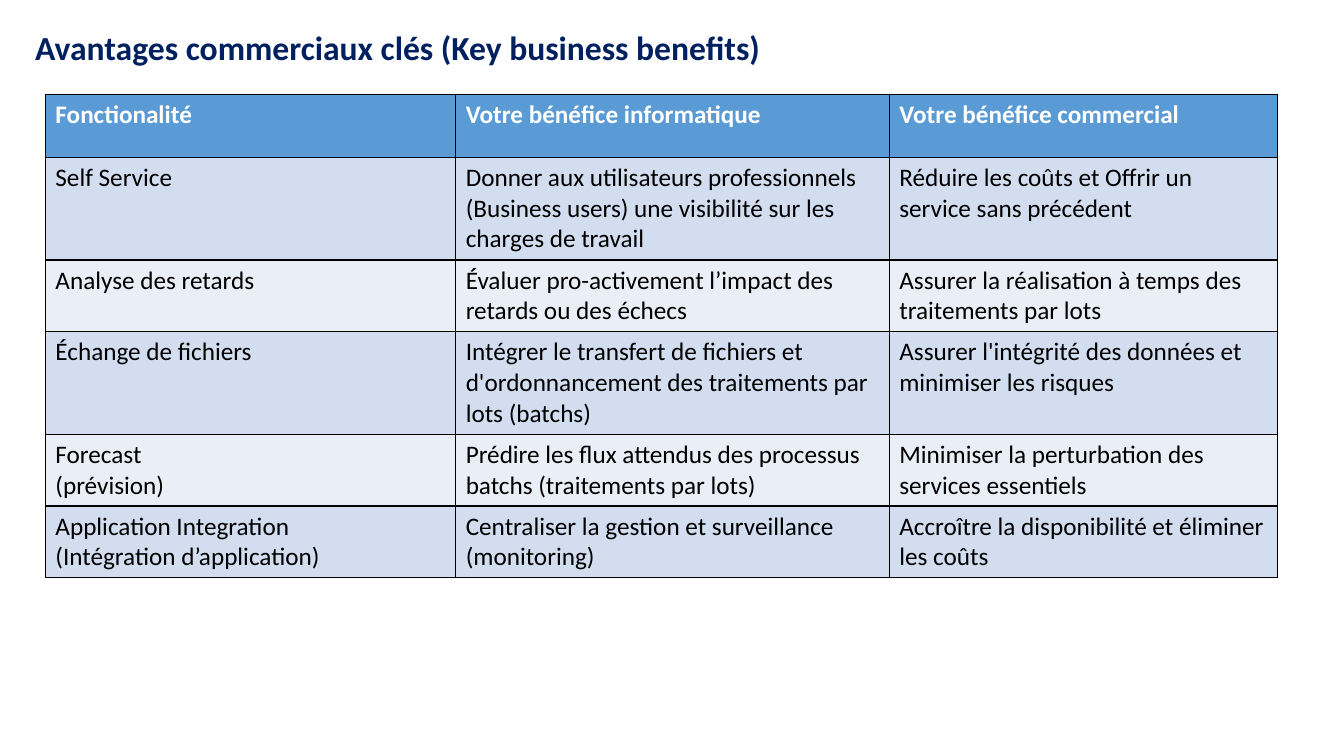
from lxml.etree import SubElement
from pptx import Presentation
from pptx.dml.color import RGBColor
from pptx.oxml.ns import qn
from pptx.util import Inches, Pt

FONT = "Calibri"
COLORS = {
    "title": "002060",
    "header": "5B9BD5",
    "header_text": "FFFFFF",
    "odd_row": "D2DEEF",
    "even_row": "EAEFF7",
    "text": "000000",
    "border": "000000",
}
COLUMN_WIDTHS = [4.07, 4.3, 3.85]
ROW_HEIGHTS = [0.62, 1.02, 0.71, 1.02, 0.71, 0.71]
BENEFITS = [
    ("Fonctionalité", "Votre bénéfice informatique", "Votre bénéfice commercial"),
    ("Self Service",
     "Donner aux utilisateurs professionnels (Business users) une visibilité sur les charges de travail",
     "Réduire les coûts et Offrir un service sans précédent"),
    ("Analyse des retards",
     "Évaluer pro-activement l’impact des retards ou des échecs",
     "Assurer la réalisation à temps des traitements par lots"),
    ("Échange de fichiers",
     "Intégrer le transfert de fichiers et d'ordonnancement des traitements par lots (batchs)",
     "Assurer l'intégrité des données et minimiser les risques"),
    ("Forecast\n(prévision)",
     "Prédire les flux attendus des processus batchs (traitements par lots)",
     "Minimiser la perturbation des services essentiels"),
    ("Application Integration\n(Intégration d’application)",
     "Centraliser la gestion et surveillance (monitoring)",
     "Accroître la disponibilité et éliminer les coûts"),
]


def write_text(text_frame, text, size, color, bold):
    text_frame.text = text
    for paragraph in text_frame.paragraphs:
        font = paragraph.font
        font.name = FONT
        font.size = Pt(size)
        font.bold = bold
        font.color.rgb = RGBColor.from_string(COLORS[color])


def fill_cell(cell, color):
    cell.fill.solid()
    cell.fill.fore_color.rgb = RGBColor.from_string(COLORS[color])


def add_borders(cell):
    properties = cell._tc.get_or_add_tcPr()
    # Border lines must come before the fill
    for position, side in enumerate(("a:lnL", "a:lnR", "a:lnT", "a:lnB")):
        line = SubElement(properties, qn(side), w=str(Pt(1)))
        solid_fill = SubElement(line, qn("a:solidFill"))
        SubElement(solid_fill, qn("a:srgbClr"), val=COLORS["border"])
        properties.insert(position, line)


def add_title(slide, text):
    title = slide.shapes.add_textbox(Inches(0.25), Inches(0.22), Inches(8.31), Inches(0.5))
    title.text_frame.word_wrap = True
    write_text(title.text_frame, text, 24, "title", True)


def add_benefits_table(slide):
    frame = slide.shapes.add_table(
        len(BENEFITS), len(COLUMN_WIDTHS), Inches(0.45), Inches(0.94),
        Inches(sum(COLUMN_WIDTHS)), Inches(sum(ROW_HEIGHTS)))
    table = frame.table
    for column, width in zip(table.columns, COLUMN_WIDTHS):
        column.width = Inches(width)
    for row, height in zip(table.rows, ROW_HEIGHTS):
        row.height = Inches(height)

    for row_index, texts in enumerate(BENEFITS):
        is_header = row_index == 0
        text_color = "header_text" if is_header else "text"
        band = "odd_row" if row_index % 2 else "even_row"
        for column_index, text in enumerate(texts):
            cell = table.cell(row_index, column_index)
            write_text(cell.text_frame, text, 18, text_color, is_header)
            fill_cell(cell, "header" if is_header else band)
            add_borders(cell)


def main():
    presentation = Presentation()
    presentation.slide_width = Inches(13.33)
    presentation.slide_height = Inches(7.5)
    slide = presentation.slides.add_slide(presentation.slide_layouts[6])

    add_benefits_table(slide)
    add_title(slide, "Avantages commerciaux clés (Key business benefits)")

    presentation.save("out.pptx")


if __name__ == "__main__":
    main()
